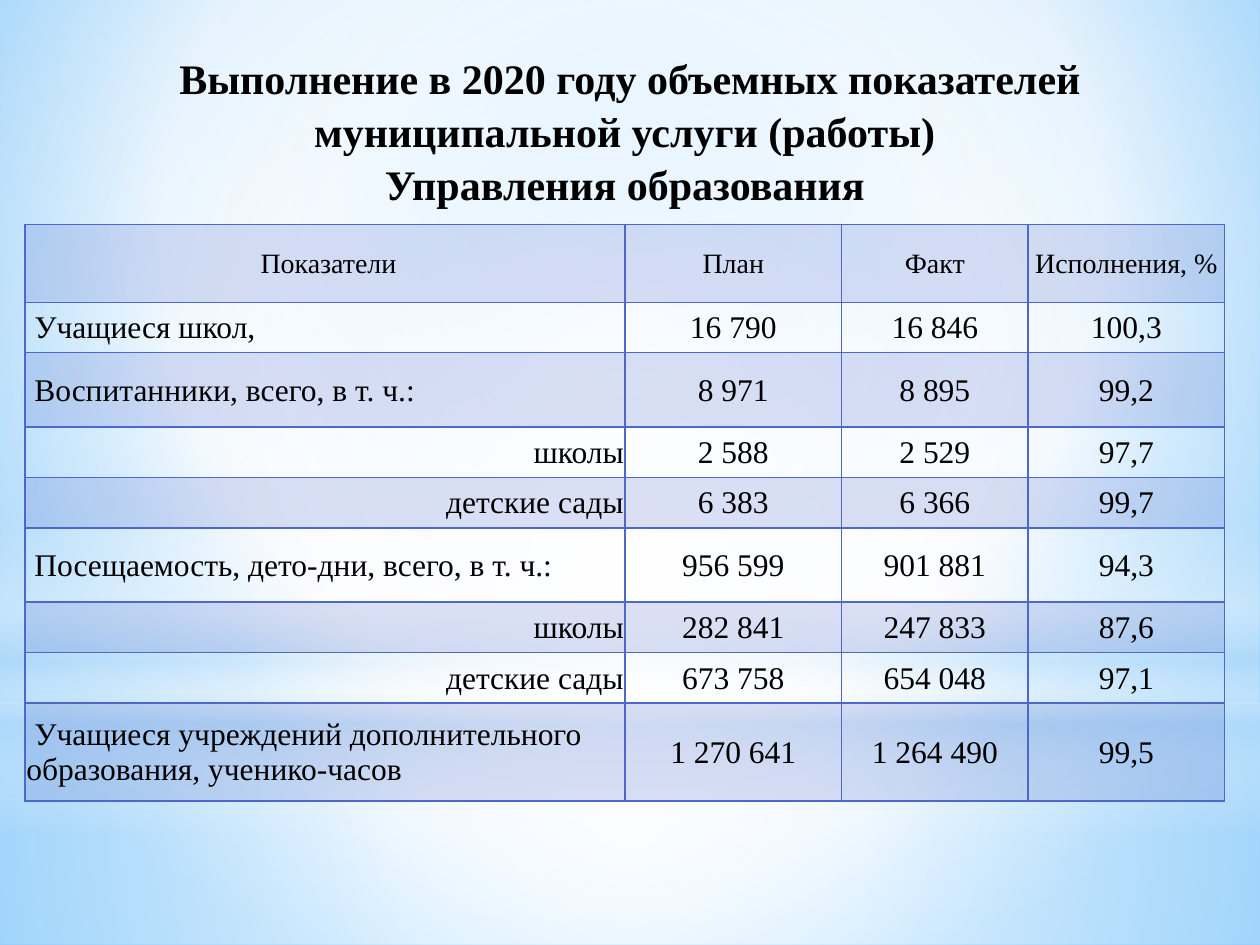
from dataclasses import dataclass
from lxml import etree
from pptx import Presentation
from pptx.dml.color import RGBColor as RGB
from pptx.enum.shapes import MSO_SHAPE as Shape
from pptx.enum.text import MSO_ANCHOR as Anchor, PP_ALIGN as Align
from pptx.oxml import parse_xml
from pptx.oxml.ns import nsdecls, qn
from pptx.util import Inches, Pt


@dataclass(frozen=True)
class Theme:
    font: str = "Times New Roman"
    ink: str = "000000"
    line: str = "4E67C8"
    white: str = "FFFFFF"
    mist: str = "B4DCFA"
    sky: str = "9ED5FF"
    deep: str = "5BB9FF"
    title: int = 24
    head: int = 16
    body: int = 18
    tint: int = 20


T = Theme()
LEFT, MID, RIGHT = Align.LEFT, Align.CENTER, Align.RIGHT

HEAD = (" Показатели", "План", "Факт", "Исполнения, %")
# Row height, label alignment, label and values
ROWS = [
    (0.4, LEFT, " Учащиеся школ,", "16 790", "16 846", "100,3"),
    (0.59, LEFT, " Воспитанники, всего, в т. ч.:", "8 971", "8 895", "99,2"),
    (0.4, RIGHT, "школы", "2 588", "2 529", "97,7"),
    (0.4, RIGHT, "детские сады", "6 383", "6 366", "99,7"),
    (0.59, LEFT, " Посещаемость, дето-дни, всего, в т. ч.:",
     "956 599", "901 881", "94,3"),
    (0.4, RIGHT, "школы", "282 841", "247 833", "87,6"),
    (0.4, RIGHT, "детские сады", "673 758", "654 048", "97,1"),
    (0.78, LEFT, " Учащиеся учреждений дополнительного образования, ученико-часов",
     "1 270 641", "1 264 490", "99,5"),
]
COLS = (4.76, 1.72, 1.48, 1.56)


def blend(fill, host, stops, focus=None):
    """Gradient of (position, colour, opacity); radial if focus is given."""
    fill.gradient()
    grad = host.find(".//" + qn("a:gradFill"))
    for part in list(grad):
        grad.remove(part)
    marks = "".join(
        f'<a:gs pos="{pos * 1000}"><a:srgbClr val="{color}">'
        f'<a:alpha val="{alpha * 1000}"/></a:srgbClr></a:gs>'
        for pos, color, alpha in stops)
    grad.append(parse_xml(f'<a:gsLst {nsdecls("a")}>{marks}</a:gsLst>'))
    if focus:
        sides = " ".join(f'{s}="{v * 1000}"' for s, v in zip("ltrb", focus))
        tail = (f'<a:path {nsdecls("a")} path="circle">'
                f'<a:fillToRect {sides}/></a:path>')
    else:
        tail = f'<a:lin {nsdecls("a")} ang="5400000" scaled="0"/>'
    grad.append(parse_xml(tail))


def style(para, size, align, bold=False):
    para.alignment = align
    for run in para.runs:
        font = run.font
        font.name, font.size, font.bold = T.font, Pt(size), bold
        font.color.rgb = RGB.from_string(T.ink)


def add_glow(slide, kind, box, stops, focus=None):
    shape = slide.shapes.add_shape(kind, *map(Inches, box))
    shape.shadow.inherit = False
    shape.line.fill.background()
    blend(shape.fill, shape._element.spPr, stops, focus)


def add_sky(slide, box):
    x, y, w, h = box
    back = slide.background
    blend(back.fill, slide._element.cSld,
          [(0, T.sky, 100), (60, T.white, 100), (100, T.deep, 100)],
          (20, 10, 20, 60))
    center = (50,) * 4
    split = 5.58
    add_glow(slide, Shape.RECTANGLE, (x, y + split, w, h - split),
             [(0, T.white, 91), (37, T.white, 76), (100, T.mist, 79)], center)
    add_glow(slide, Shape.RECTANGLE, (x, y, w, split),
             [(0, T.white, 89), (48, T.white, 62), (100, T.mist, 79)], center)
    add_glow(slide, Shape.RECTANGLE, (x, y + 4.12, w, 2.5),
             [(0, T.white, 0), (29, T.white, 30), (45, T.mist, 40),
              (55, T.white, 26), (65, T.mist, 60), (100, T.white, 0)])
    add_glow(slide, Shape.OVAL, (x, y + 1.75, w, split),
             [(0, T.white, 100), (56, T.white, 0)], center)


def add_title(slide, box):
    frame = slide.shapes.add_textbox(*map(Inches, box)).text_frame
    frame.word_wrap = True
    frame.vertical_anchor = Anchor.MIDDLE
    frame.text = ("Выполнение в 2020 году объемных показателей "
                  "муниципальной услуги (работы) \vУправления образования ")
    para = frame.paragraphs[0]
    para.line_spacing = 1.05
    style(para, T.title, MID, True)


def set_cell(cell, text, size, align, tinted):
    cell.margin_left = cell.margin_right = cell.margin_top = Inches(0.01)
    cell.margin_bottom = 0
    cell.vertical_anchor = Anchor.MIDDLE
    cell.text_frame.text = text
    style(cell.text_frame.paragraphs[0], size, align)
    # Borders come before the fill
    props = cell._tc.get_or_add_tcPr()
    for side in "LRTB":
        props.append(parse_xml(
            f'<a:ln{side} {nsdecls("a")} w="{Pt(1)}"><a:solidFill>'
            f'<a:srgbClr val="{T.line}"/></a:solidFill></a:ln{side}>'))
    if tinted:
        cell.fill.solid()
        cell.fill.fore_color.rgb = RGB.from_string(T.line)
        color = props.find(qn("a:solidFill")).find(qn("a:srgbClr"))
        etree.SubElement(color, qn("a:alpha"), val=str(T.tint * 1000))
    else:
        cell.fill.background()


def add_grid(slide, box):
    rows = [(0.62, MID, *HEAD), *ROWS]
    table = slide.shapes.add_table(
        len(rows), len(COLS), *map(Inches, box)).table
    table.first_row = table.horz_banding = False
    for col, width in zip(table.columns, COLS):
        col.width = Inches(width)
    for r, (height, align, *texts) in enumerate(rows):
        table.rows[r].height = Inches(height)
        for c, text in enumerate(texts):
            set_cell(table.cell(r, c), text, T.body if r else T.head,
                     MID if c else align, r % 2 == 0)


def main():
    deck = Presentation()
    deck.slide_width, deck.slide_height = Inches(10), Inches(7.5)
    slide = deck.slides.add_slide(deck.slide_layouts[6])
    add_sky(slide, (0, 0, 10, 7.5))
    add_title(slide, (0.5, 0.36, 9, 1.34))
    add_grid(slide, (0.2, 1.78, 9.53, 4.59))
    deck.save("out.pptx")


if __name__ == "__main__":
    main()
